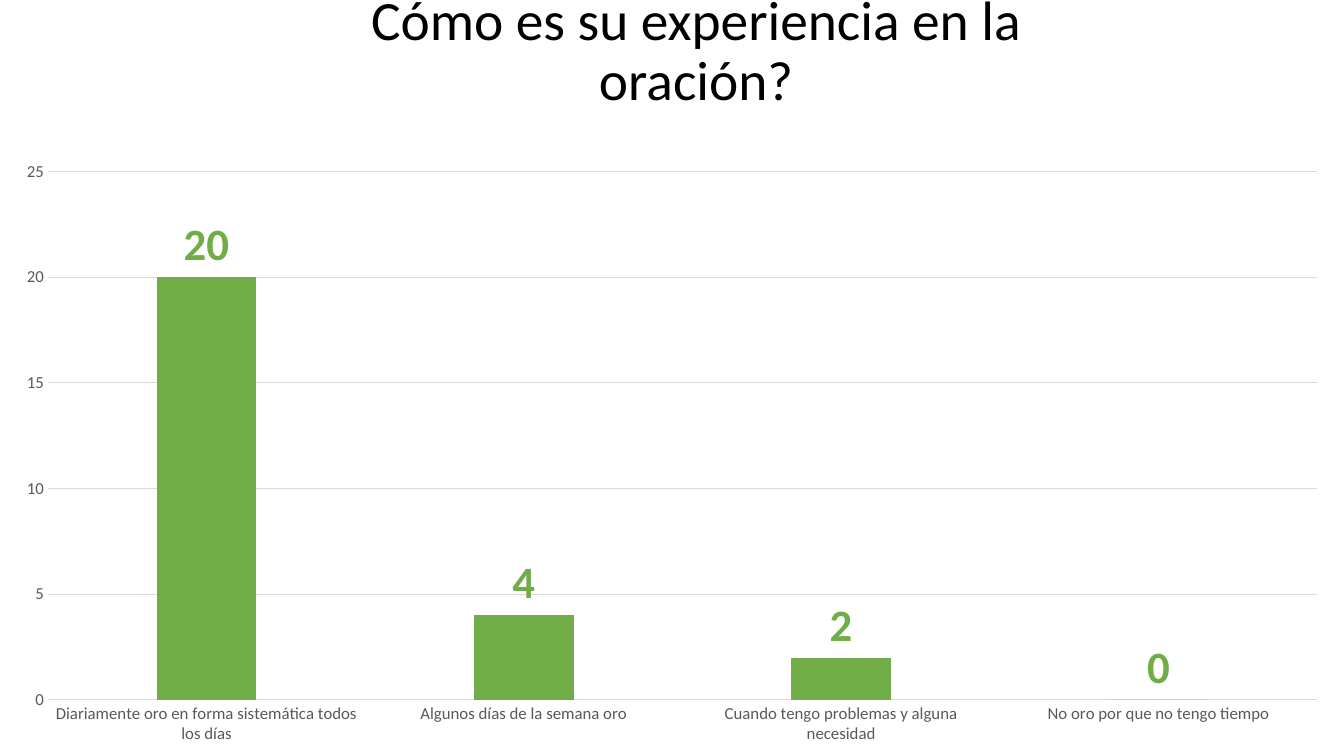
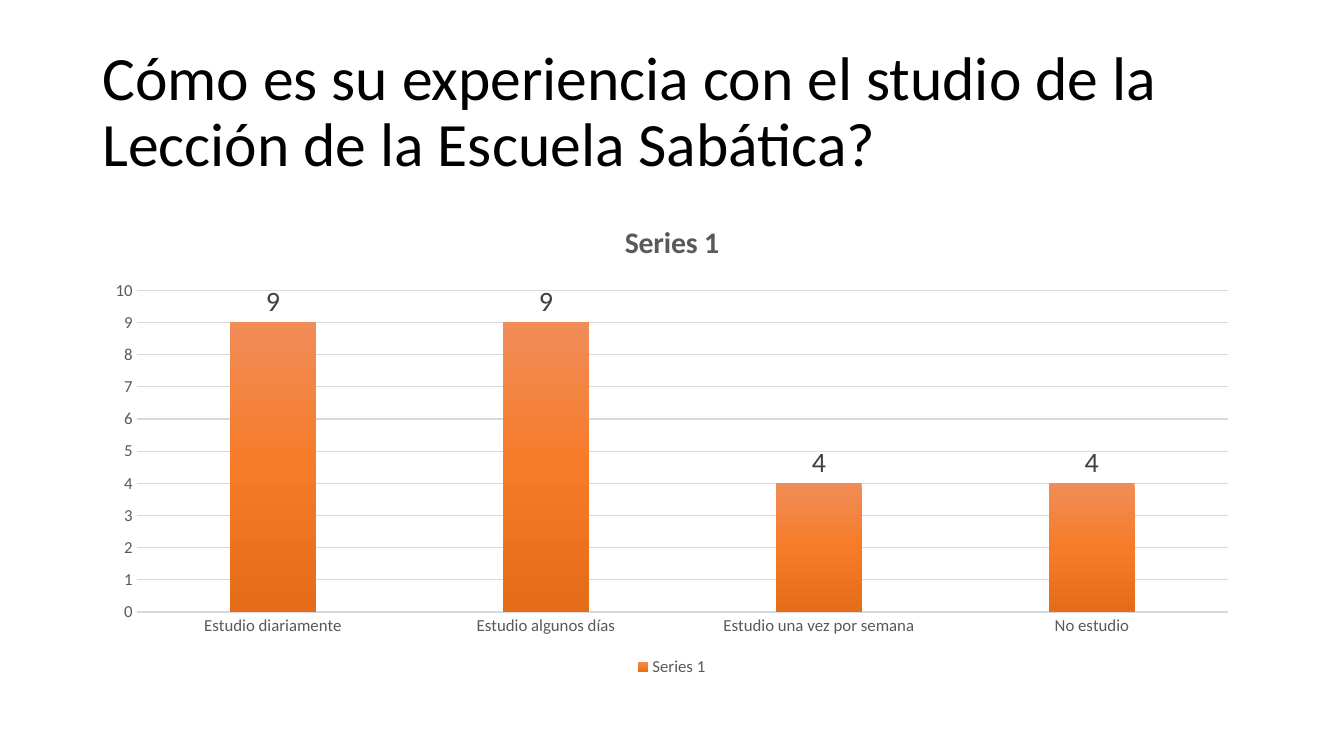
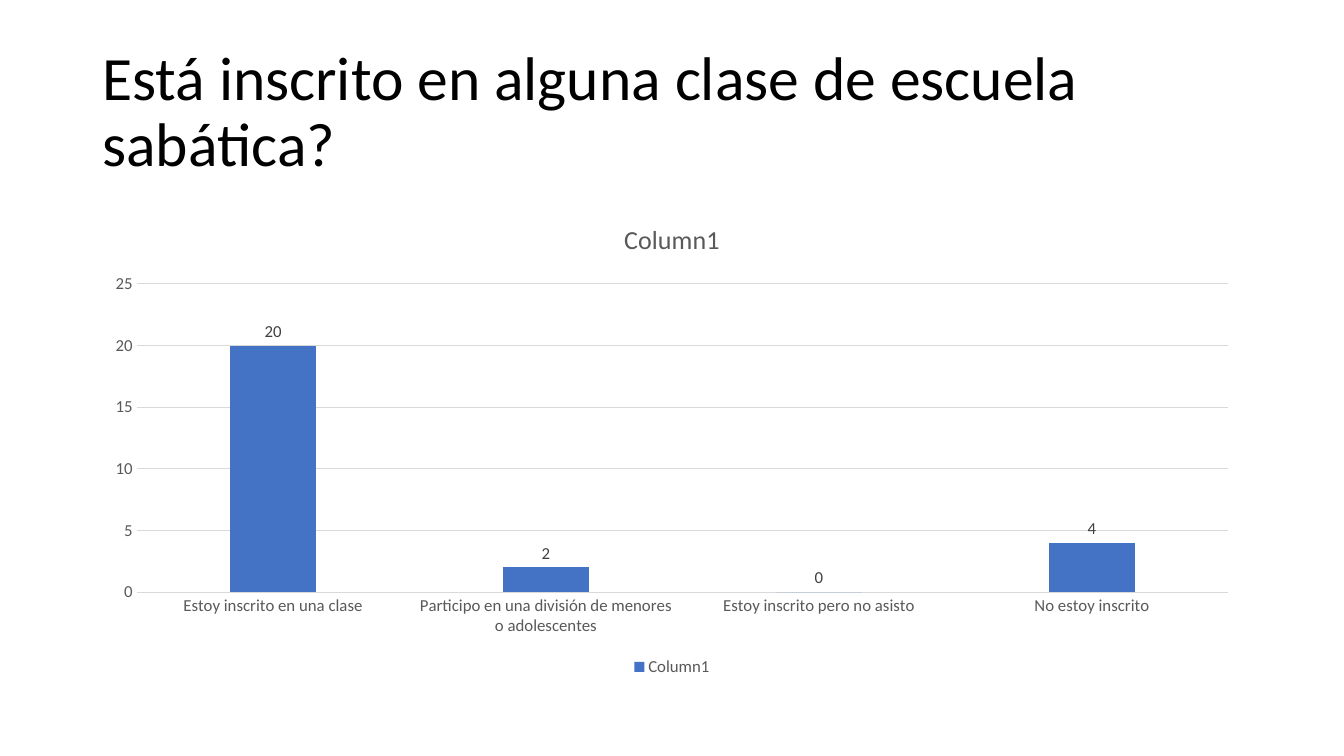
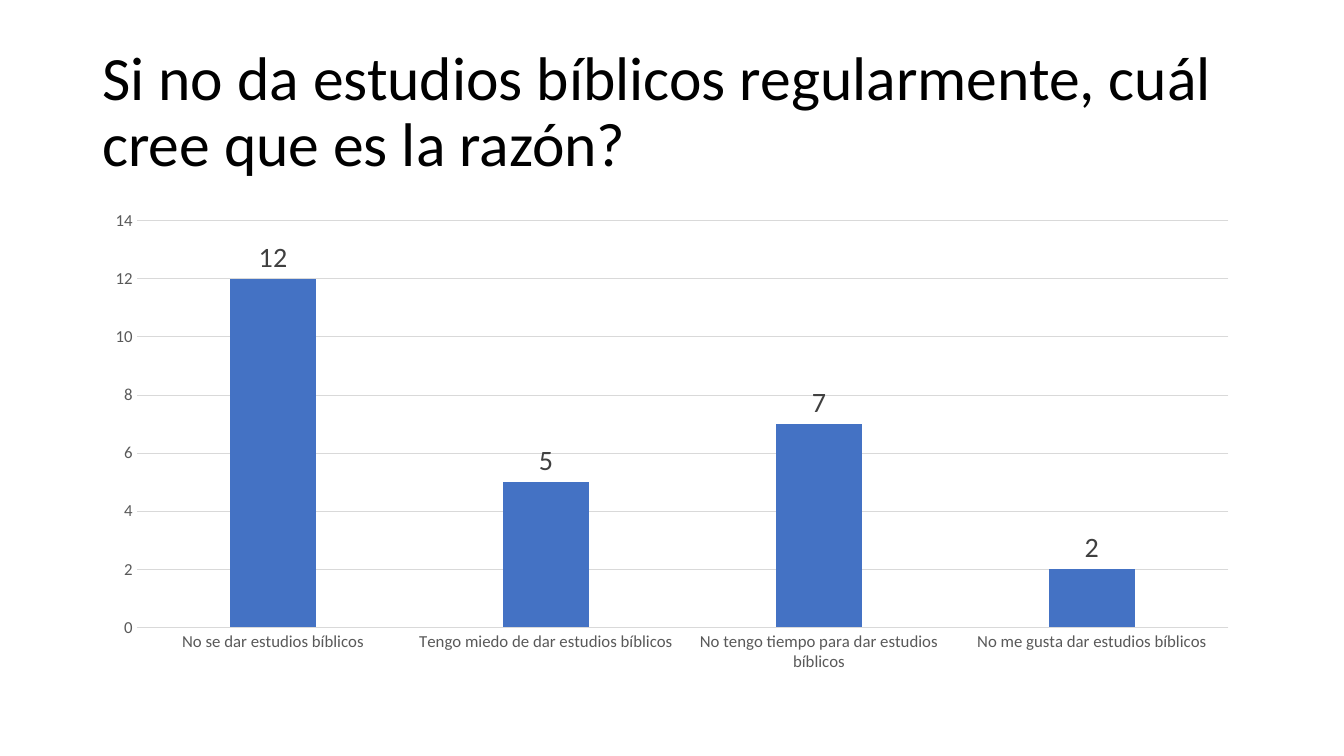
import copy
import dataclasses

import pptx
import pptx.chart.data
import pptx.dml.color
import pptx.enum.chart
import pptx.enum.text
import pptx.oxml.ns
import pptx.util

Pt = pptx.util.Pt


@dataclasses.dataclass(frozen=True)
class Theme:
    font: str = "Calibri"
    black: str = "000000"
    axis_text: str = "595959"
    label_text: str = "404040"
    rule: str = "D9D9D9"
    green: str = "70AD47"
    blue: str = "4472C4"
    oranges: tuple = ((0, "F18C57"), (0.5, "F67B28"), (1, "E56C19"))
    title_size: float = 44
    small_title_size: float = 39.6
    axis_size: float = 12
    label_size: float = 20
    big_label_size: float = 32


THEME = Theme()

# Left, top, width and height, in points
TITLE_AREA = (66, 28.75, 828, 104.4)
CHART_AREA = (66, 143.75, 828, 342.6)
WIDE_TITLE_AREA = (229, 0, 536.4, 75.6)
WIDE_CHART_AREA = (0, 106.6, 960, 433.4)


def rgb(color):
    return pptx.dml.color.RGBColor.from_string(color)


def style_font(font, size, color, bold=False):
    font.name = THEME.font
    font.size = Pt(size)
    font.bold = bold
    font.color.rgb = rgb(color)


def add_page(deck):
    return deck.slides.add_slide(deck.slide_layouts[6])


def add_title(page, text, area=TITLE_AREA, size=THEME.title_size, align=None):
    box = page.shapes.add_textbox(*map(Pt, area))
    frame = box.text_frame
    frame.word_wrap = True
    frame.vertical_anchor = pptx.enum.text.MSO_ANCHOR.MIDDLE
    para = frame.paragraphs[0]
    para.alignment = align or pptx.enum.text.PP_ALIGN.LEFT
    para.line_spacing = 0.9
    span = para.add_run()
    span.text = text
    style_font(span.font, size, THEME.black)


def fill_gradient(series, stops):
    """Fill the bars from top to bottom through any number of colours."""
    fill = series.format.fill
    fill.gradient()
    fill.gradient_angle = 270
    stop_list = series._element.find(".//" + pptx.oxml.ns.qn("a:gsLst"))
    for _ in stops[2:]:
        stop_list.append(copy.deepcopy(stop_list[0]))
    for stop, (position, color) in zip(fill.gradient_stops, stops):
        stop.position = position
        stop.color.rgb = rgb(color)


def style_axes(chart, line_width):
    for axis in (chart.category_axis, chart.value_axis):
        axis.major_tick_mark = pptx.enum.chart.XL_TICK_MARK.NONE
        axis.minor_tick_mark = pptx.enum.chart.XL_TICK_MARK.NONE
        axis.format.line.fill.background()
        style_font(axis.tick_labels.font, THEME.axis_size, THEME.axis_text)
    if line_width:
        line = chart.category_axis.format.line
        line.color.rgb = rgb(THEME.rule)
        line.width = Pt(line_width)
    chart.value_axis.has_major_gridlines = True
    grid = chart.value_axis.major_gridlines.format.line
    grid.color.rgb = rgb(THEME.rule)
    grid.width = Pt(0.75)


def add_labels(series, size, color, bold):
    labels = series.data_labels
    labels.show_value = True
    labels.position = pptx.enum.chart.XL_LABEL_POSITION.OUTSIDE_END
    style_font(labels.font, size, color, bold)


def add_heading_and_legend(chart, text, size, bold):
    chart.has_title = True
    chart.chart_title.include_in_layout = False
    span = chart.chart_title.text_frame.paragraphs[0].add_run()
    span.text = text
    style_font(span.font, size, THEME.axis_text, bold)
    chart.has_legend = True
    chart.legend.position = pptx.enum.chart.XL_LEGEND_POSITION.BOTTOM
    chart.legend.include_in_layout = False
    style_font(chart.legend.font, THEME.axis_size, THEME.axis_text)


def add_column_chart(page, answers, color, area=CHART_AREA, name="Series 1",
                     line_width=0.75, overlap=0, label_size=THEME.label_size,
                     label_color=THEME.label_text, bold_labels=False,
                     heading_size=None, bold_heading=False):
    data = pptx.chart.data.CategoryChartData()
    data.categories = list(answers)
    data.add_series(name, list(answers.values()))
    kind = pptx.enum.chart.XL_CHART_TYPE.COLUMN_CLUSTERED
    chart = page.shapes.add_chart(kind, *map(Pt, area), data).chart
    style_font(chart.font, 10, THEME.black)
    chart.has_title = chart.has_legend = False
    plot = chart.plots[0]
    plot.gap_width = 219
    plot.overlap = overlap
    plot.vary_by_categories = False
    series = plot.series[0]
    series.invert_if_negative = False
    if isinstance(color, str):
        series.format.fill.solid()
        series.format.fill.fore_color.rgb = rgb(color)
    else:
        fill_gradient(series, color)
    style_axes(chart, line_width)
    add_labels(series, label_size, label_color, bold_labels)
    if heading_size:
        add_heading_and_legend(chart, name, heading_size, bold_heading)


def main():
    deck = pptx.Presentation()
    deck.slide_width, deck.slide_height = Pt(960), Pt(540)

    # Prayer
    page = add_page(deck)
    add_title(page, "Cómo es su experiencia en la oración?", WIDE_TITLE_AREA,
              THEME.small_title_size, pptx.enum.text.PP_ALIGN.CENTER)
    add_column_chart(page, {
        "Diariamente oro en forma sistemática todos los días": 20,
        "Algunos días de la semana oro": 4,
        "Cuando tengo problemas y alguna necesidad": 2,
        "No oro por que no tengo tiempo": 0,
    }, THEME.green, WIDE_CHART_AREA, line_width=None,
        label_size=THEME.big_label_size, label_color=THEME.green,
        bold_labels=True)

    # Lesson study
    page = add_page(deck)
    add_title(page, "Cómo es su experiencia con el studio de la Lección "
                    "de la Escuela Sabática?")
    add_column_chart(page, {
        "Estudio diariamente": 9,
        "Estudio algunos días": 9,
        "Estudio una vez por semana": 4,
        "No estudio": 4,
    }, THEME.oranges, line_width=1, heading_size=21.3, bold_heading=True)

    # Class enrolment
    page = add_page(deck)
    add_title(page, "Está inscrito en alguna clase de escuela sabática?")
    add_column_chart(page, {
        "Estoy inscrito en una clase": 20,
        "Participo en una división de menores o adolescentes": 2,
        "Estoy inscrito pero no asisto": 0,
        "No estoy inscrito": 4,
    }, THEME.blue, name="Column1", overlap=-27, label_size=THEME.axis_size,
        heading_size=18.6)

    # Reasons for not giving studies
    page = add_page(deck)
    add_title(page, "Si no da estudios bíblicos regularmente, cuál cree "
                    "que es la razón?")
    add_column_chart(page, {
        "No se dar estudios bíblicos": 12,
        "Tengo miedo de dar estudios bíblicos": 5,
        "No tengo tiempo para dar estudios bíblicos": 7,
        "No me gusta dar estudios bíblicos": 2,
    }, THEME.blue, overlap=-27)

    deck.save("out.pptx")


if __name__ == "__main__":
    main()
